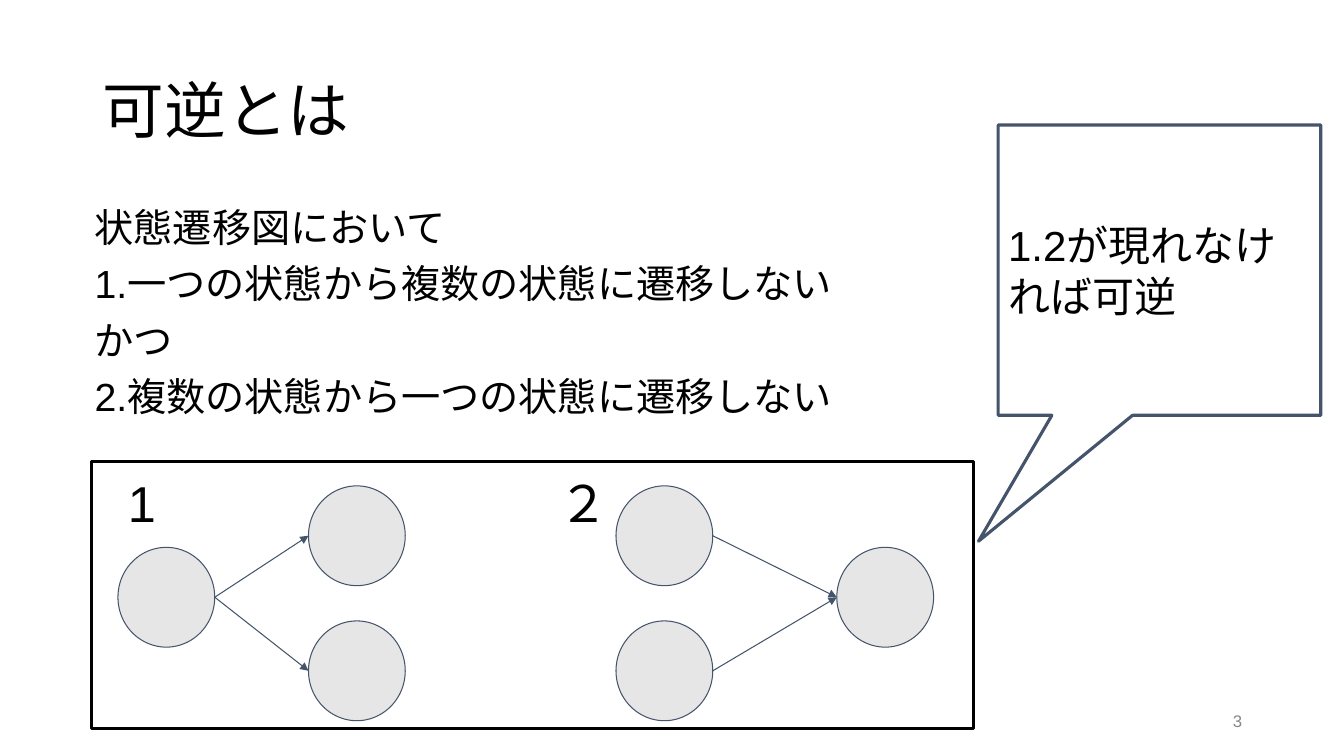
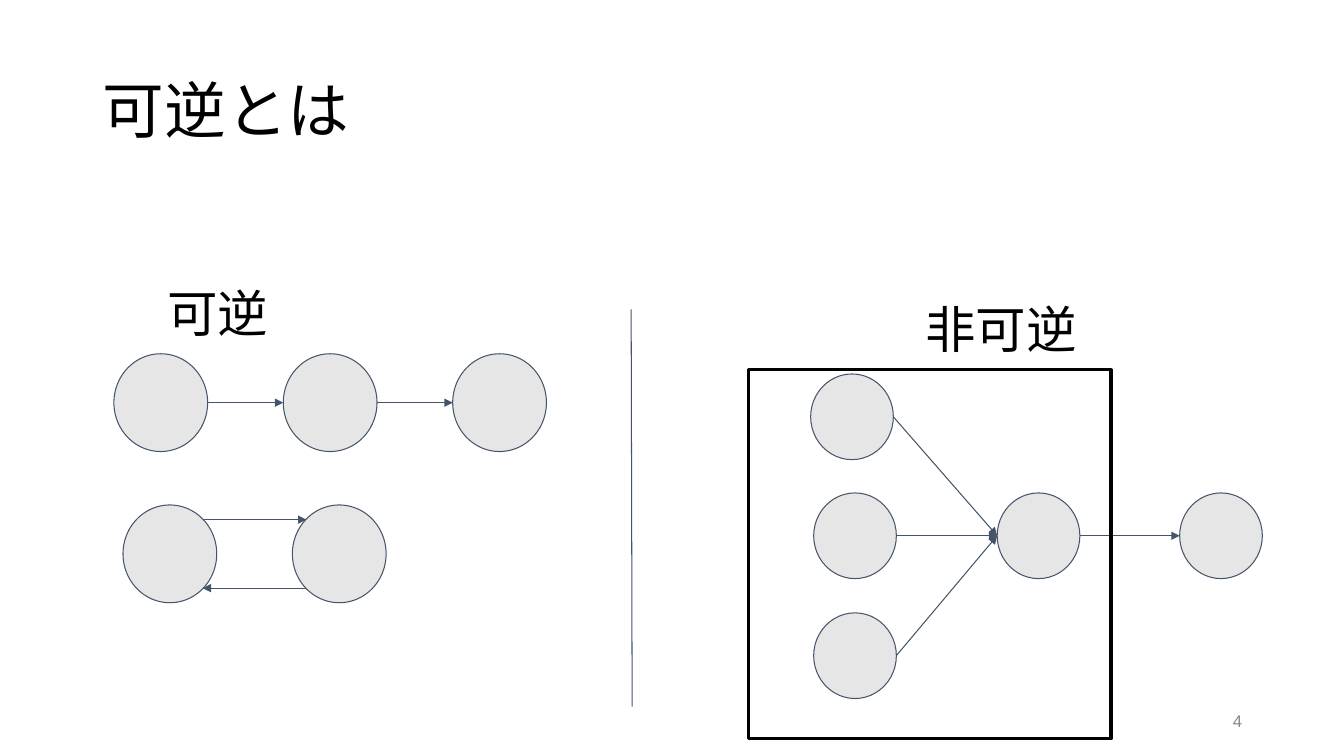
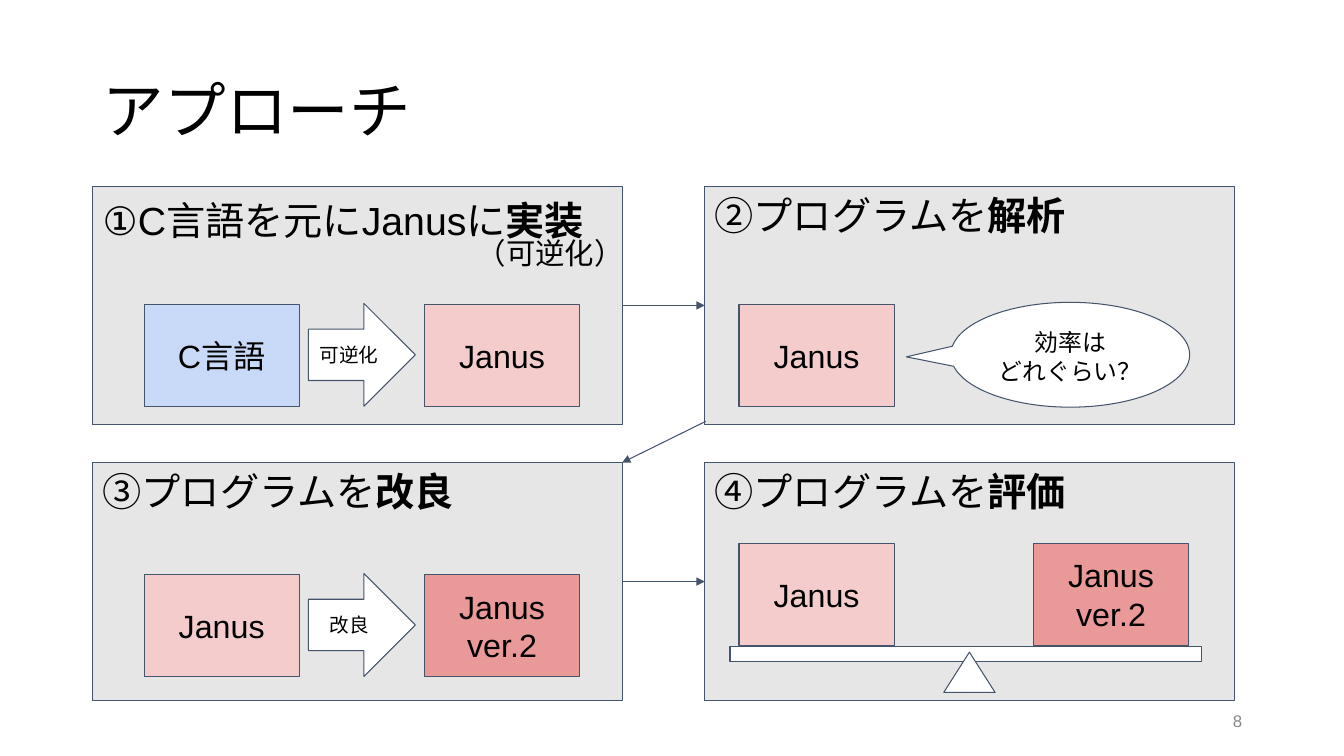
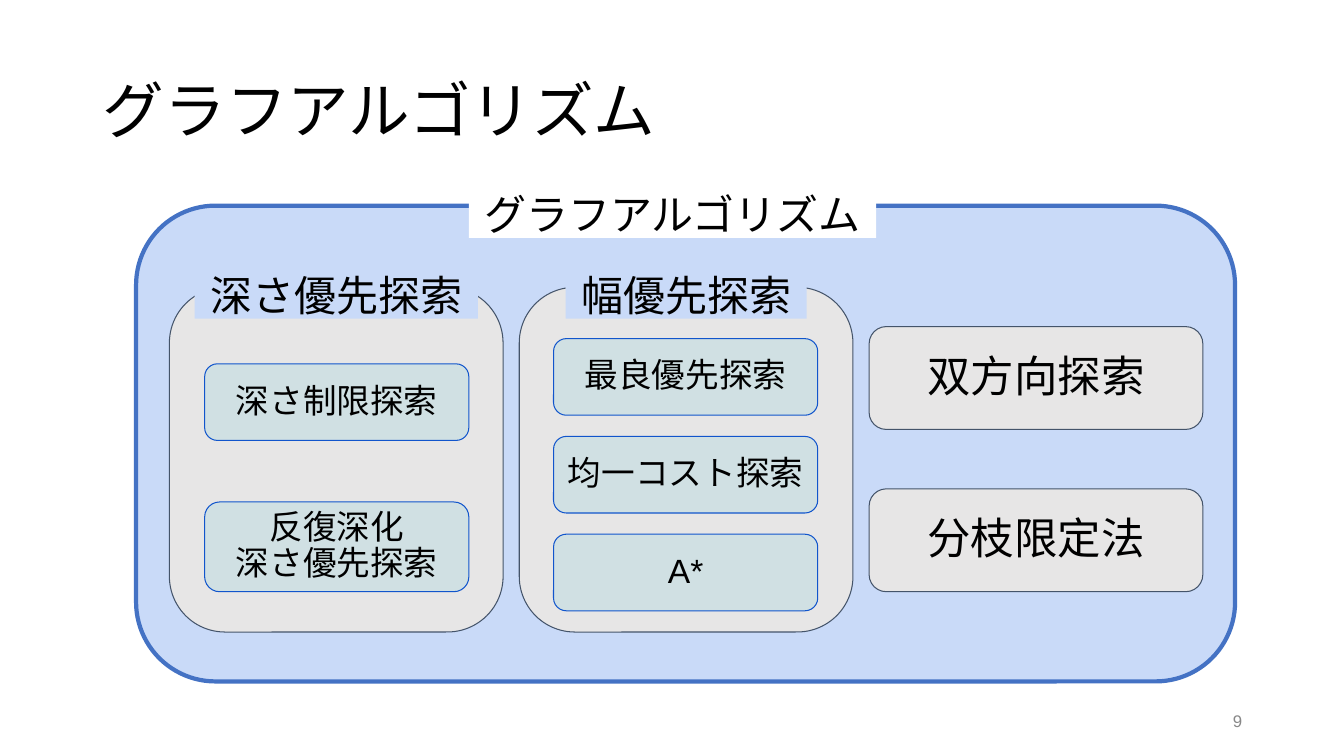
from dataclasses import dataclass, replace
from itertools import pairwise

from lxml.etree import SubElement
from pptx import Presentation
from pptx.dml.color import RGBColor
from pptx.enum.shapes import MSO_CONNECTOR, MSO_SHAPE
from pptx.enum.text import MSO_ANCHOR, MSO_AUTO_SIZE, PP_ALIGN
from pptx.oxml.ns import qn
from pptx.presentation import Presentation as Deck
from pptx.shapes.autoshape import Shape
from pptx.shapes.connector import Connector
from pptx.slide import Slide
from pptx.text.text import TextFrame
from pptx.util import Inches, Pt

FONT = "Arial"
BLACK = "000000"
WHITE = "FFFFFF"
GRAY = "E7E6E6"
SLATE = "44546A"
NUMBER_GRAY = "888888"
PALE_BLUE = "C9DAF8"
BLUE = "4472C4"
DEEP_BLUE = "1155CC"
TEAL = "D0E0E3"
PINK = "F4CCCC"
RED = "EA9999"

TITLE_ONLY = 5
LEFT_SIDE, RIGHT_SIDE = 1, 3


@dataclass(frozen=True)
class Box:
    """A rectangle in inches."""

    left: float
    top: float
    width: float
    height: float

    def point(self, across: float, down: float) -> tuple[float, float]:
        """Point at the given fractions of the width and the height."""
        return self.left + across * self.width, self.top + down * self.height

    @property
    def left_middle(self) -> tuple[float, float]:
        return self.point(0, 0.5)

    @property
    def right_middle(self) -> tuple[float, float]:
        return self.point(1, 0.5)

    def lengths(self) -> list[Inches]:
        return [Inches(value) for value in (self.left, self.top, self.width, self.height)]


@dataclass(frozen=True)
class TextStyle:
    size: float
    color: str = BLACK
    align: PP_ALIGN = PP_ALIGN.LEFT
    anchor: MSO_ANCHOR = MSO_ANCHOR.TOP
    line_spacing: float = 1.0
    space_before: float = 0
    inset: float = 0.1


@dataclass(frozen=True)
class Look:
    fill: str | None = None
    line: str | None = SLATE
    weight: float = 0.75


@dataclass(frozen=True)
class Panel:
    box: Box
    text: str
    bold: str
    style: TextStyle


@dataclass(frozen=True)
class Label:
    """A text in a shape at a given place."""

    box: Box
    text: str
    fill: str


TITLE = TextStyle(44, anchor=MSO_ANCHOR.MIDDLE, line_spacing=0.9, inset=0.05)
BODY = TextStyle(28, line_spacing=0.9, space_before=10, inset=0.05)
NUMBER = TextStyle(12, NUMBER_GRAY, PP_ALIGN.RIGHT, MSO_ANCHOR.MIDDLE, inset=0.05)
HEADING = TextStyle(36)
CALLOUT = TextStyle(30, anchor=MSO_ANCHOR.MIDDLE)
PANEL = replace(BODY, inset=0.1)
FIRST_PANEL = TextStyle(28)
TILE = TextStyle(23, align=PP_ALIGN.CENTER, anchor=MSO_ANCHOR.MIDDLE)
ARROW_TEXT = replace(TILE, size=14)
GROUP_NAME = TextStyle(30, align=PP_ALIGN.CENTER)
METHOD = replace(TILE, size=24, line_spacing=0.9, space_before=10)
LARGE_METHOD = replace(METHOD, size=31)

NODE = Look(GRAY)
PLAIN = Look(WHITE)
FRAME = Look(line=BLACK, weight=2.25)


def rgb(color: str) -> RGBColor:
    return RGBColor.from_string(color)


def write(frame: TextFrame, paragraphs: list[str], style: TextStyle, bold: str = "") -> None:
    """Fill a frame; bold is added to the end of the last paragraph."""
    settings = {
        "word_wrap": True,
        "auto_size": MSO_AUTO_SIZE.NONE,
        "vertical_anchor": style.anchor,
        "margin_left": Inches(0.1),
        "margin_right": Inches(0.1),
        "margin_top": Inches(style.inset),
        "margin_bottom": Inches(style.inset),
    }
    for name, value in settings.items():
        setattr(frame, name, value)
    paragraph_format = {
        "alignment": style.align,
        "line_spacing": style.line_spacing,
        "space_before": Pt(style.space_before),
        "space_after": Pt(0),
    }
    for index, text in enumerate(paragraphs):
        paragraph = frame.add_paragraph() if index else frame.paragraphs[0]
        paragraph.text = text
        for name, value in paragraph_format.items():
            setattr(paragraph, name, value)
    if bold:
        run = paragraph.add_run()
        run.text = bold
        run.font.bold = True
    for paragraph in frame.paragraphs:
        for run in paragraph.runs:
            run.font.size = Pt(style.size)
            run.font.name = FONT
            run.font.color.rgb = rgb(style.color)
            SubElement(run.font._element, qn("a:ea"), typeface=FONT)


def add_text(slide: Slide, box: Box, paragraphs: list[str], style: TextStyle) -> None:
    write(slide.shapes.add_textbox(*box.lengths()).text_frame, paragraphs, style)


def add_shape(
    slide: Slide,
    kind: MSO_SHAPE,
    box: Box,
    look: Look,
    text: str = "",
    style: TextStyle = TILE,
    bold: str = "",
    adjustments: tuple[float, ...] = (),
) -> Shape:
    shape = slide.shapes.add_shape(kind, *box.lengths())
    shape.shadow.inherit = False
    for index, value in enumerate(adjustments):
        shape.adjustments[index] = value
    if look.fill:
        shape.fill.solid()
        shape.fill.fore_color.rgb = rgb(look.fill)
    else:
        shape.fill.background()
    if look.line:
        shape.line.color.rgb = rgb(look.line)
        shape.line.width = Pt(look.weight)
    else:
        shape.line.fill.background()
    if text:
        write(shape.text_frame, [text], style, bold)
    return shape


def add_line(
    slide: Slide, start: tuple[float, float], end: tuple[float, float], arrow: bool = True
) -> Connector:
    ends = [Inches(value) for value in (*start, *end)]
    connector = slide.shapes.add_connector(MSO_CONNECTOR.STRAIGHT, *ends)
    connector.line.color.rgb = rgb(SLATE)
    connector.line.width = Pt(0.75)
    if arrow:
        SubElement(connector.line._get_or_add_ln(), qn("a:tailEnd"), type="triangle")
    SubElement(connector._element.spPr, qn("a:effectLst"))
    return connector


def add_nodes(slide: Slide, boxes: list[Box]) -> None:
    for box in boxes:
        add_shape(slide, MSO_SHAPE.OVAL, box, NODE)


def add_transition(slide: Slide, source: Box, target: Box) -> None:
    add_line(slide, source.right_middle, target.left_middle)


def add_titled_slide(presentation: Deck, title: str, number: int) -> Slide:
    slide = presentation.slides.add_slide(presentation.slide_layouts[TITLE_ONLY])
    placeholder = slide.shapes.title
    names = ("left", "top", "width", "height")
    for name, value in zip(names, Box(0.92, 0.4, 11.5, 1.45).lengths()):
        setattr(placeholder, name, value)
    write(placeholder.text_frame, [title], TITLE)
    add_text(slide, Box(9.42, 6.95, 3, 0.4), [str(number)], NUMBER)
    return slide


def build_definition(presentation: Deck) -> None:
    slide = add_titled_slide(presentation, "可逆とは", 3)
    conditions = [
        "状態遷移図において",
        "1.一つの状態から複数の状態に遷移しない",
        "かつ",
        "2.複数の状態から一つの状態に遷移しない",
    ]
    add_text(slide, Box(0.84, 2.02, 11.5, 4.76), conditions, BODY)

    def node(left: float, top: float) -> Box:
        return Box(left, top, 0.96, 0.99)

    upper, middle, lower = 4.82, 5.43, 6.16
    origin, goal = node(1.17, middle), node(8.3, middle)
    targets = [node(3.06, top) for top in (upper, lower)]
    sources = [node(6.11, top) for top in (upper, lower)]
    add_nodes(slide, [origin, *targets, *sources, goal])
    for target in targets:
        add_transition(slide, origin, target)
    for source in sources:
        add_transition(slide, source, goal)

    for left, text in ((1.17, "1"), (5.44, "２")):
        add_text(slide, Box(left, 4.58, 0.47, 0.73), [text], HEADING)
    add_shape(slide, MSO_SHAPE.RECTANGLE, Box(0.91, 4.58, 8.75, 2.65), FRAME)
    add_shape(
        slide,
        MSO_SHAPE.RECTANGULAR_CALLOUT,
        Box(9.9, 1.24, 3.2, 2.88),
        Look(weight=2.25),
        "1.2が現れなければ可逆",
        CALLOUT,
        adjustments=(-0.561, 0.934),
    )


def build_comparison(presentation: Deck) -> None:
    slide = add_titled_slide(presentation, "可逆とは", 4)
    for left, top, text in ((1.56, 2.7, "可逆"), (9.08, 2.86, "非可逆")):
        add_text(slide, Box(left, top, 3.08, 0.65), [text], HEADING)
    add_line(slide, (6.26, 3.07), (6.27, 7.01), arrow=False)

    step = 1.68
    chain = [Box(1.13 + step * index, 3.51, 0.93, 0.97) for index in range(3)]
    add_nodes(slide, chain)
    for source, target in pairwise(chain):
        add_transition(slide, source, target)

    first, second = cycle = [Box(1.22 + step * index, 5.01, 0.93, 0.97) for index in range(2)]
    add_nodes(slide, cycle)
    near, far = 0.15, 0.85
    add_line(slide, first.point(far, near), second.point(near, near))
    add_line(slide, second.point(near, far), first.point(far, far))

    sources = [
        Box(left, top, 0.82, 0.85) for left, top in ((8.04, 3.71), (8.07, 4.89), (8.07, 6.08))
    ]
    merged, last = (Box(left, 4.89, 0.82, 0.85) for left in (9.89, 11.7))
    add_nodes(slide, [*sources, merged, last])
    for source in sources:
        add_transition(slide, source, merged)
    add_transition(slide, merged, last)
    add_shape(slide, MSO_SHAPE.RECTANGLE, Box(7.42, 3.67, 3.6, 3.66), FRAME)


def build_approach(presentation: Deck) -> None:
    slide = add_titled_slide(presentation, "アプローチ", 8)
    implement, analyse, improve, evaluate = (
        Box(left, top, 5.25, 2.36) for top in (1.85, 4.59) for left in (0.92, 6.99)
    )
    panels = [
        Panel(implement, "①C言語を元にJanusに", "実装", FIRST_PANEL),
        Panel(analyse, "②プログラムを", "解析", PANEL),
        Panel(improve, "③プログラムを", "改良", PANEL),
        Panel(evaluate, "④プログラムを", "評価", PANEL),
    ]
    shapes = [
        add_shape(slide, MSO_SHAPE.RECTANGLE, panel.box, NODE, panel.text, panel.style, panel.bold)
        for panel in panels
    ]
    add_text(slide, Box(4.63, 2.23, 1.87, 0.62), ["（可逆化）"], TextStyle(21))

    def tile(left: float, top: float, text: str, fill: str) -> Label:
        return Label(Box(left, top, 1.54, 1.01), text, fill)

    old, new = "Janus", "Janus ver.2"
    tiles = [
        tile(1.43, 3.02, "C言語", PALE_BLUE),
        tile(4.21, 3.02, old, PINK),
        tile(7.33, 3.02, old, PINK),
        tile(1.43, 5.7, old, PINK),
        tile(4.21, 5.7, new, RED),
        tile(7.33, 5.39, old, PINK),
        tile(10.25, 5.39, new, RED),
    ]
    for item in tiles:
        add_shape(slide, MSO_SHAPE.RECTANGLE, item.box, Look(item.fill), item.text)
    for top, text in ((3.01, "可逆化"), (5.69, "改良")):
        box = Box(3.06, top, 1.06, 1.02)
        add_shape(slide, MSO_SHAPE.RIGHT_ARROW, box, PLAIN, text, ARROW_TEXT)
    add_shape(
        slide,
        MSO_SHAPE.OVAL_CALLOUT,
        Box(9.43, 3, 2.37, 1.04),
        PLAIN,
        "効率は\nどれぐらい？",
        TextStyle(17, align=PP_ALIGN.CENTER),
        adjustments=(-0.686, 0.02),
    )
    add_shape(slide, MSO_SHAPE.RECTANGLE, Box(7.24, 6.41, 4.68, 0.15), PLAIN)
    add_shape(slide, MSO_SHAPE.ISOSCELES_TRIANGLE, Box(9.36, 6.47, 0.51, 0.4), PLAIN)

    for source, target in (shapes[:2], shapes[2:]):
        connector = add_line(slide, (0, 0), (0, 0))
        connector.begin_connect(source, RIGHT_SIDE)
        connector.end_connect(target, LEFT_SIDE)
    add_line(slide, (7, 4.18), improve.point(1, 0))


def build_algorithms(presentation: Deck) -> None:
    slide = add_titled_slide(presentation, "グラフアルゴリズム", 9)
    rounded = MSO_SHAPE.ROUNDED_RECTANGLE
    add_shape(slide, rounded, Box(1.35, 2.04, 10.9, 4.72), Look(PALE_BLUE, BLUE, 3))
    columns = [1.68 + 3.47 * index for index in range(3)]
    for left in columns[:2]:
        add_shape(slide, rounded, Box(left, 2.85, 3.31, 3.42), NODE)
    for top, text in ((3.24, "双方向探索"), (4.85, "分枝限定法")):
        add_shape(slide, rounded, Box(columns[2], top, 3.31, 1.02), NODE, text, LARGE_METHOD)

    names = [
        Label(Box(4.65, 1.77, 4.04, 0.59), "グラフアルゴリズム", WHITE),
        Label(Box(1.93, 2.57, 2.81, 0.59), "深さ優先探索", PALE_BLUE),
        Label(Box(5.61, 2.57, 2.39, 0.59), "幅優先探索", PALE_BLUE),
    ]
    for name in names:
        look = Look(name.fill, line=None)
        add_shape(slide, MSO_SHAPE.RECTANGLE, name.box, look, name.text, GROUP_NAME)

    depth_methods = [
        Label(Box(2.03, 3.61, 2.62, 0.76), "深さ制限探索", TEAL),
        Label(Box(2.03, 4.98, 2.62, 0.89), "反復深化\n深さ優先探索", TEAL),
    ]
    breadth_methods = [
        Label(Box(5.49, 3.36 + 0.97 * index, 2.62, 0.76), text, TEAL)
        for index, text in enumerate(("最良優先探索", "均一コスト探索", "A*"))
    ]
    for method in depth_methods + breadth_methods:
        add_shape(slide, rounded, method.box, Look(method.fill, DEEP_BLUE), method.text, METHOD)


def main() -> None:
    presentation = Presentation()
    presentation.slide_width = Inches(13.33)
    presentation.slide_height = Inches(7.5)
    for build in (build_definition, build_comparison, build_approach, build_algorithms):
        build(presentation)
    presentation.save("out.pptx")


if __name__ == "__main__":
    main()
